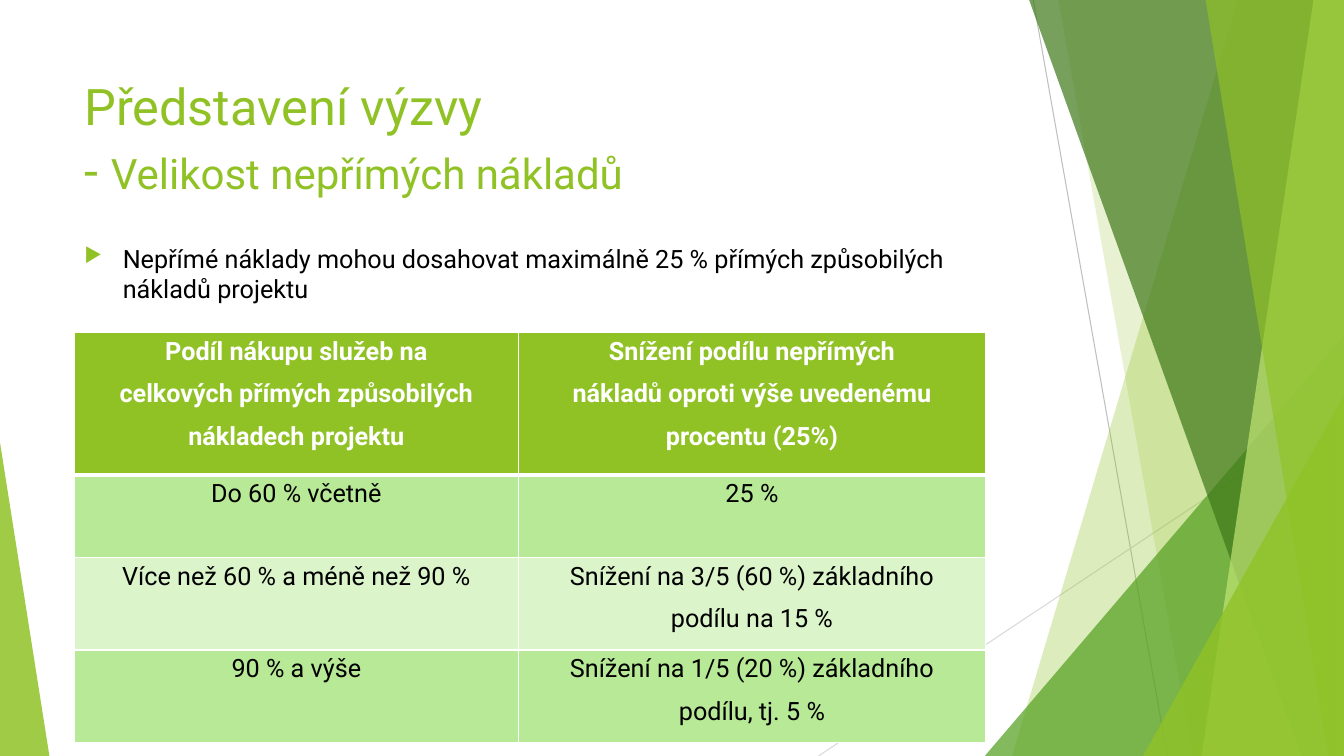
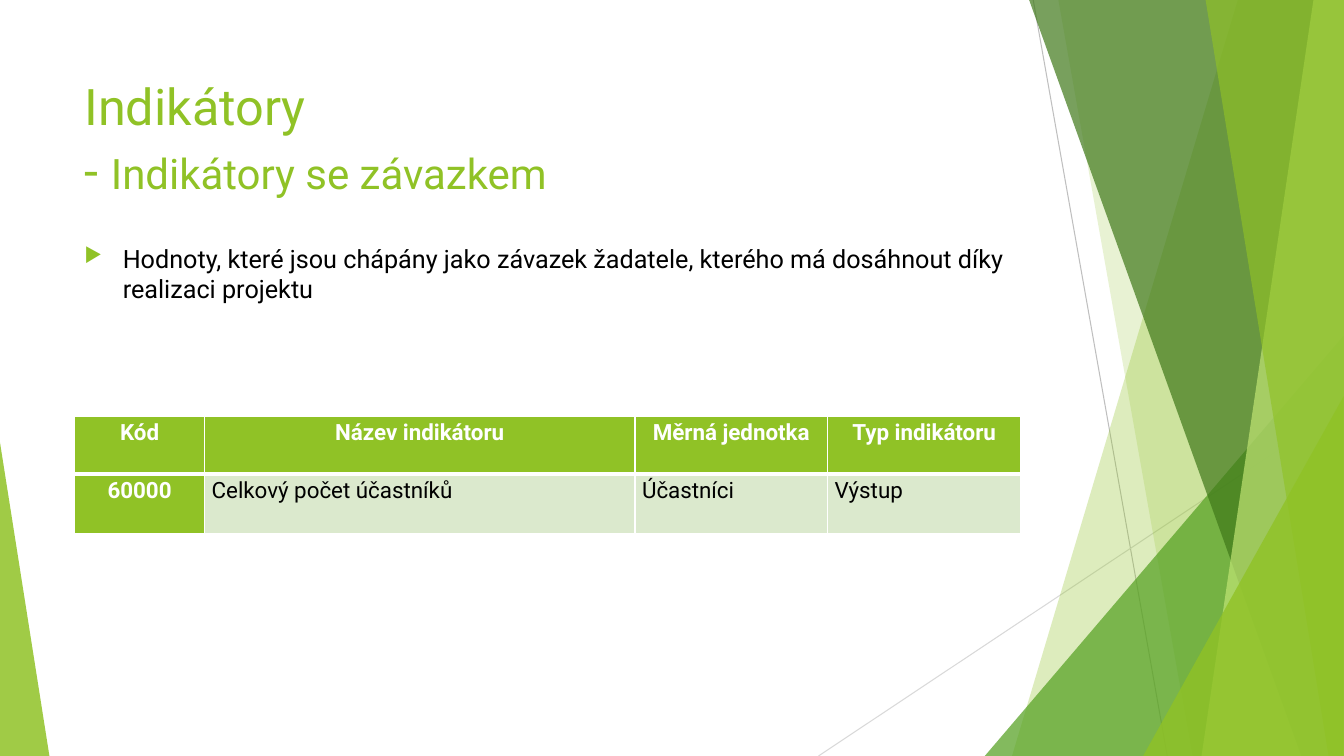
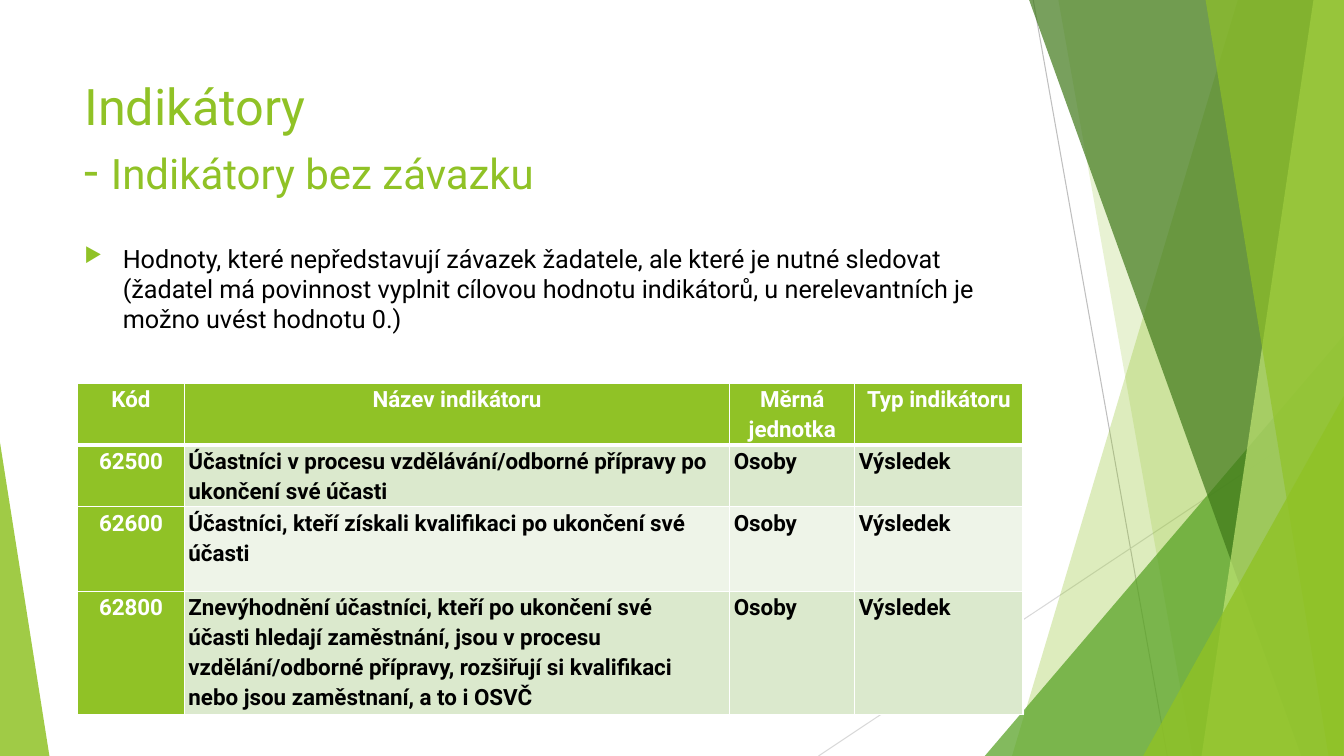
from lxml import etree
from pptx import Presentation
from pptx import util as u
from pptx.dml.color import RGBColor
from pptx.enum import shapes, text
from pptx.oxml.ns import qn

COLORS = {
    "lime": "90C226", "leaf": "54A021", "forest": "3F7819", "pale": "C0E474",
    "white": "FFFFFF", "black": "000000", "gray": "BFBFBF", "silver": "D9D9D9",
    "mint": "B7E996", "mint_light": "DBF4CA", "sage": "DBE9CD", "sage_light": "EEF4E8",
}
FONT = "Roboto"
WIDTH, HEIGHT = 133.33, 75  # slide size in grid cells
LEFT, CONTENT = 7.4, 94     # left edge and width of the text column

LINES = [(102.5, 0, 115.8, HEIGHT, "gray"), (WIDTH, 40.3, 81.2, HEIGHT, "silver")]
# Bands reach the right edge: x at top, x at bottom, colour, opacity.
# Triangles stand on the bottom edge: left, top, width, apex, colour, opacity.
DECOR = [
    ("band", 122.8, 100.4, "lime", 30),
    ("band", 105, 118.3, "lime", 20),
    ("triangle", 97.7, 33.3, 35.6, 1, "leaf", 72),
    ("band", 102.1, 129.1, "forest", 70),
    ("band", 130.3, 119.2, "pale", 70),
    ("band", 119.6, 131.8, "lime", 65),
    ("triangle", 113.4, 39.3, 19.9, 1, "lime", 80),
    ("triangle", 0, 43.9, 4.9, 0, "lime", 85),
]


def grid(n):
    """Length of n grid cells, each a tenth of an inch."""
    return u.Inches(n / 10)


def rgb(name):
    return RGBColor.from_string(COLORS[name])


def sub(parent, tag, **attrs):
    return etree.SubElement(parent, qn(tag), attrs)


class Deck:
    def __init__(self):
        self.prs = Presentation()
        self.prs.slide_width, self.prs.slide_height = grid(WIDTH), grid(HEIGHT)

    def slide(self, title, subtitle, bullet):
        self.s = self.prs.slides.add_slide(self.prs.slide_layouts[6])
        for line in LINES:
            self.line(*line)
        for kind, *args in DECOR:
            getattr(self, kind)(*args)
        self.title(title, subtitle)
        self.bullet(bullet)

    def line(self, x1, y1, x2, y2, color):
        c = self.s.shapes.add_connector(
            shapes.MSO_CONNECTOR.STRAIGHT, *map(grid, (x1, y1, x2, y2)))
        c.line.color.rgb = rgb(color)
        c.line.width = u.Pt(0.75)
        sub(c.element.spPr, "a:effectLst")

    def paint(self, sp, color, opacity):
        sp.shadow.inherit = False
        sp.line.fill.background()
        sp.fill.solid()
        sp.fill.fore_color.rgb = rgb(color)
        clr = next(sp.element.spPr.iter(qn("a:srgbClr")))
        sub(clr, "a:alpha", val=str(opacity * 1000))

    def band(self, top_x, bottom_x, color, opacity):
        ff = self.s.shapes.build_freeform(grid(top_x), 0)
        ff.add_line_segments([(grid(x), grid(y)) for x, y in (
            (WIDTH, 0), (WIDTH, HEIGHT), (bottom_x, HEIGHT))])
        self.paint(ff.convert_to_shape(), color, opacity)

    def triangle(self, x, y, w, apex, color, opacity):
        sp = self.s.shapes.add_shape(
            shapes.MSO_SHAPE.ISOSCELES_TRIANGLE, *map(grid, (x, y, w, HEIGHT - y)))
        sp.adjustments[0] = apex
        self.paint(sp, color, opacity)

    def font(self, p, size, color, bold=False):
        f = p.font
        f.name, f.size, f.bold = FONT, u.Pt(size), bold
        f.color.rgb = rgb(color)

    def paragraph(self, y, h):
        """First paragraph of a new text box in the text column."""
        tf = self.s.shapes.add_textbox(*map(grid, (LEFT, y, CONTENT, h))).text_frame
        tf.word_wrap = True
        return tf.paragraphs[0]

    def title(self, title, subtitle):
        p = self.paragraph(6.7, 14.4)
        p.line_spacing = 1.05
        self.font(p, 36, "lime")
        p.add_run().text = title
        p.add_line_break()
        p.add_run().text = "- "
        r = p.add_run()
        r.text = subtitle
        r.font.size = u.Pt(30)

    def bullet(self, words):
        p = self.paragraph(23.6, 9.5)
        p.text = words
        pPr = p._p.get_or_add_pPr()
        pPr.set("marL", str(grid(3.8)))
        pPr.set("indent", str(-grid(3.8)))
        sub(sub(pPr, "a:buClr"), "a:srgbClr", val=COLORS["lime"])
        sub(pPr, "a:buSzPct", val="80000")
        sub(pPr, "a:buChar", char="▶")
        self.font(p, 18, "black")

    def borders(self, cell, top, bottom):
        tcPr = cell._tc.get_or_add_tcPr()
        for tag, width in (("a:lnL", 1), ("a:lnR", 1), ("a:lnT", top), ("a:lnB", bottom)):
            ln = sub(tcPr, tag, w=str(u.Pt(width)))
            sub(sub(ln, "a:solidFill"), "a:srgbClr", val=COLORS["white"])

    def table(self, x, y, cols, rows, cells, bands, size=16, inset=0.7,
              code_col=True, bold=False):
        """Header row on top; body rows alternate the two band colours."""
        tbl = self.s.shapes.add_table(
            len(rows), len(cols), *map(grid, (x, y, sum(cols), sum(rows)))).table
        for col, w in zip(tbl.columns, cols):
            col.width = grid(w)
        for i, (row, h) in enumerate(zip(tbl.rows, rows)):
            row.height = grid(h)
            for j, cell in enumerate(row.cells):
                head = i == 0 or (code_col and j == 0)
                centred = head or not code_col
                cell.text = cells[i][j]
                cell.margin_left = grid(inset)
                cell.margin_right = grid(inset if centred else 1.5)
                cell.margin_top = cell.margin_bottom = 0
                self.borders(cell, 3 if i == 1 else 1, 3 if i == 0 else 1)
                cell.fill.solid()
                cell.fill.fore_color.rgb = rgb("lime" if head else bands[(i - 1) % 2])
                for p in cell.text_frame.paragraphs:
                    p.alignment = text.PP_ALIGN.CENTER if centred else text.PP_ALIGN.LEFT
                    p.line_spacing, p.space_after = 1.15, u.Pt(6)
                    self.font(p, size, "white" if head else "black", head or bold)


def main():
    deck = Deck()
    header = ["Kód", "Název indikátoru", "Měrná jednotka", "Typ indikátoru"]
    sage = ("sage", "sage_light")

    deck.slide("Představení výzvy", "Velikost nepřímých nákladů",
               "Nepřímé náklady mohou dosahovat maximálně 25 % přímých "
               "způsobilých nákladů projektu")
    deck.table(LEFT, 33, [44, 46.4], [14.1, 8.2, 9.2, 9.2], [
        ["Podíl nákupu služeb na\ncelkových přímých způsobilých\nnákladech projektu",
         "Snížení podílu nepřímých\nnákladů oproti výše uvedenému\nprocentu (25%)"],
        ["Do 60 % včetně", "25 %"],
        ["Více než 60 % a méně než 90 %",
         "Snížení na 3/5 (60 %) základního\npodílu na 15 %"],
        ["90 % a výše", "Snížení na 1/5 (20 %) základního\npodílu, tj. 5 %"],
    ], ("mint", "mint_light"), size=18, code_col=False)

    deck.slide("Indikátory", "Indikátory se závazkem",
               "Hodnoty, které jsou chápány jako závazek žadatele, kterého má "
               "dosáhnout díky realizaci projektu")
    deck.table(LEFT, 41.3, [12.9, 42.7, 19.1, 19.2], [5.7, 5.9], [
        header,
        ["60000", "Celkový počet účastníků", "Účastníci", "Výstup"],
    ], sage)

    deck.slide("Indikátory", "Indikátory bez závazku",
               "Hodnoty, které nepředstavují závazek žadatele, ale které je nutné "
               "sledovat (žadatel má povinnost vyplnit cílovou hodnotu indikátorů, "
               "u nerelevantních je možno uvést hodnotu 0.)")
    people = [
        ("62500", "Účastníci v procesu vzdělávání/odborné přípravy po ukončení své účasti"),
        ("62600", "Účastníci, kteří získali kvalifikaci po ukončení své účasti"),
        ("62800", "Znevýhodnění účastníci, kteří po ukončení své účasti hledají "
                  "zaměstnání, jsou v procesu vzdělání/odborné přípravy, rozšiřují si "
                  "kvalifikaci nebo jsou zaměstnaní, a to i OSVČ"),
    ]
    deck.table(7.7, 38, [10.6, 54.1, 12.4, 16.7], [5.8, 5.8, 8.4, 11.8],
               [header] + [[code, name, "Osoby", "Výsledek"] for code, name in people],
               sage, inset=0.4, bold=True)

    deck.prs.save("out.pptx")


if __name__ == "__main__":
    main()
